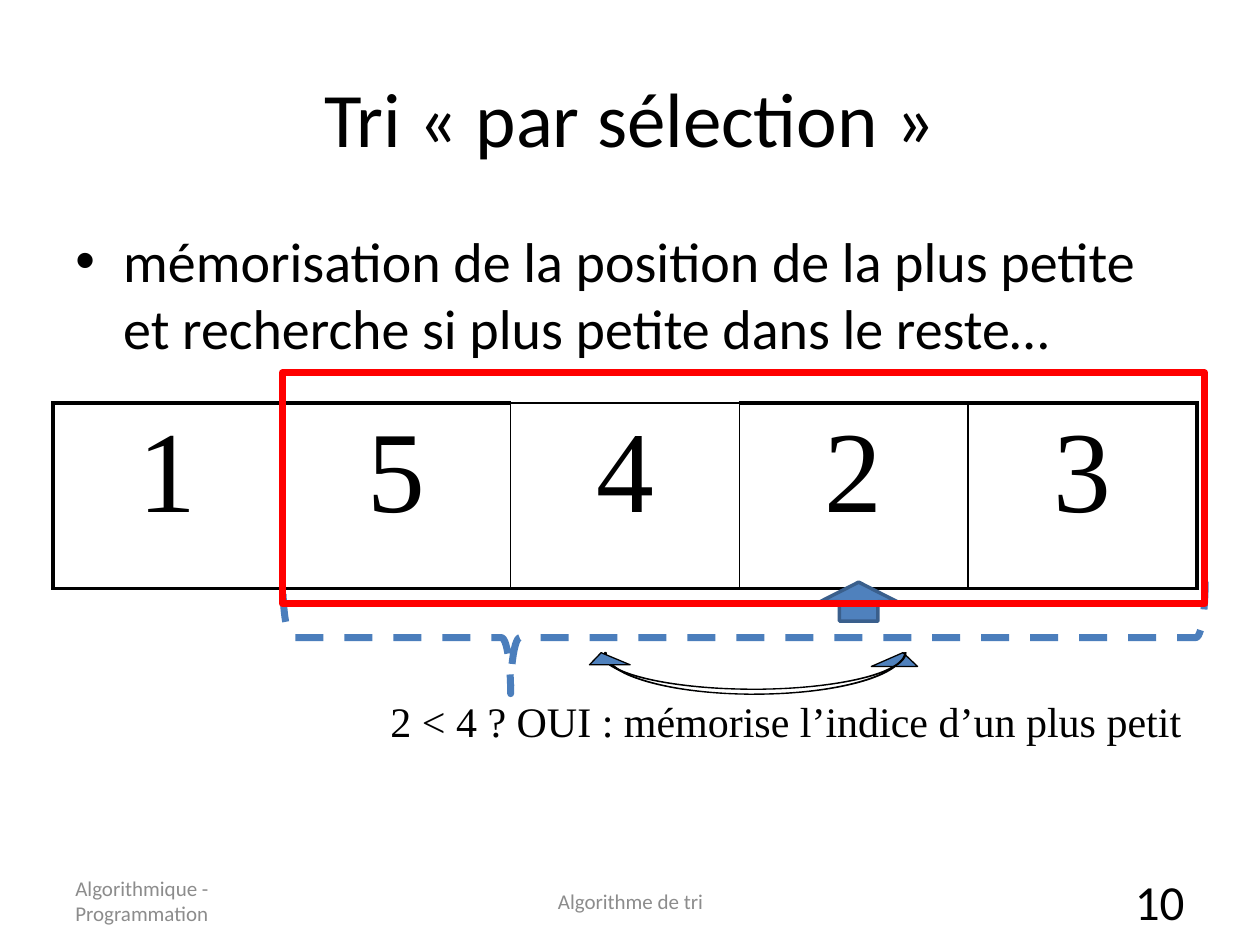
"""Build the slide on selection sort with its array, comparison arrows and caption."""
from lxml.etree import SubElement
from pptx import Presentation
from pptx.dml.color import RGBColor
from pptx.enum.dml import MSO_LINE_DASH_STYLE as Dash
from pptx.enum.shapes import MSO_SHAPE as Shape
from pptx.enum.text import MSO_ANCHOR as Anchor, PP_ALIGN as Align
from pptx.oxml import parse_xml
from pptx.oxml.ns import nsdecls, qn
from pptx.util import Inches, Pt

COLORS = {
    "black": "000000",
    "gray": "8C8C8C",
    "blue": "4F81BD",
    "dark_blue": "3A5F8C",
    "brace": "4B7EBC",
    "red": "FF0000",
}

presentation = Presentation()
presentation.slide_width, presentation.slide_height = Inches(10), Inches(7.5)
slide = presentation.slides.add_slide(presentation.slide_layouts[6])


def add_text(text, box, size, align=Align.LEFT, anchor=Anchor.MIDDLE,
             font="Calibri", color="black", wrap=True):
    frame = slide.shapes.add_textbox(*map(Inches, box)).text_frame
    frame.word_wrap = wrap
    frame.vertical_anchor = anchor
    paragraph = frame.paragraphs[0]
    paragraph.text = text
    paragraph.alignment = align
    run_font = paragraph.runs[0].font
    run_font.name, run_font.size = font, Pt(size)
    run_font.color.rgb = RGBColor.from_string(COLORS[color])
    return paragraph


def add_figure(kind, box, line, width, fill=None, adjustments=()):
    shape = slide.shapes.add_shape(kind, *map(Inches, box))
    shape.shadow.inherit = False
    for index, value in enumerate(adjustments):
        shape.adjustments[index] = value
    if fill:
        shape.fill.solid()
        shape.fill.fore_color.rgb = RGBColor.from_string(COLORS[fill])
    else:
        shape.fill.background()
    shape.line.color.rgb = RGBColor.from_string(COLORS[line])
    shape.line.width = Pt(width)
    return shape


add_text("Tri « par sélection »", (0.5, 0.3, 9, 1.25), 44, Align.CENTER)

bullet = add_text(
    "mémorisation de la position de la plus petite et recherche si plus petite dans le reste…",
    (0.5, 1.75, 9, 4.95), 32, anchor=Anchor.TOP)
properties = bullet._p.get_or_add_pPr()
properties.set("marL", str(Inches(0.38)))
properties.set("indent", str(Inches(-0.38)))
SubElement(properties, qn("a:buFont")).set("typeface", "Arial")
SubElement(properties, qn("a:buChar")).set("char", "•")

values = ["1", "5", "4", "2", "3"]
table = slide.shapes.add_table(
    1, len(values), Inches(0.42), Inches(3.2), Inches(9.08), Inches(1.47)).table
table.first_row = table.horz_banding = False
for column, value in enumerate(values):
    table.columns[column].width = Inches(9.08 / len(values))
    cell = table.cell(0, column)
    cell.text = value
    paragraph = cell.text_frame.paragraphs[0]
    paragraph.alignment = Align.CENTER
    font = paragraph.runs[0].font
    font.name, font.size = "Times New Roman", Pt(66)
    font.color.rgb = RGBColor.from_string(COLORS["black"])
    borders = {
        "lnL": 2.25 if column == 0 else 1,
        "lnR": 2.25 if column == len(values) - 1 else 1,
        "lnT": 1 if value == "4" else 2.25,
        "lnB": 2.25,
    }
    cell_properties = cell._tc.get_or_add_tcPr()
    for side, width in borders.items():
        cell_properties.append(parse_xml(
            f'<a:{side} {nsdecls("a")} w="{Pt(width)}"><a:solidFill>'
            f'<a:srgbClr val="{COLORS["black"]}"/></a:solidFill></a:{side}>'))
    cell.fill.background()

brace = add_figure(Shape.LEFT_BRACE, (5.46, 1.4, 0.89, 7.32), "brace", 4,
                   adjustments=(0.083, 0.247))
brace.rotation = 270
brace.line.dash_style = Dash.DASH

add_text("Algorithmique - Programmation", (0.5, 6.95, 2.33, 0.4), 12, color="gray")
add_text("Algorithme de tri", (3.42, 6.95, 3.17, 0.4), 12, Align.CENTER, color="gray")
add_text("10", (7.17, 6.95, 2.33, 0.4), 28, Align.RIGHT)

add_figure(Shape.UP_ARROW, (6.51, 4.62, 0.61, 0.31), "dark_blue", 2, "blue")
right_arrow, left_arrow = [
    add_figure(Shape.CURVED_UP_ARROW, box, "black", 0.75, "blue", (0.032, 1.112, 0.333))
    for box in ((4.8, 5.18, 2.55, 0.33), (4.61, 5.18, 2.58, 0.29))]
left_arrow._element.spPr.find(qn("a:xfrm")).set("flipH", "1")

add_text("2 < 4 ? OUI : mémorise l’indice d’un plus petit", (3, 5.47, 6.54, 0.5), 24,
         anchor=Anchor.TOP, font="Times New Roman", wrap=False)
add_figure(Shape.RECTANGLE, (2.24, 2.96, 7.32, 1.83), "red", 4)

presentation.save("out.pptx")
